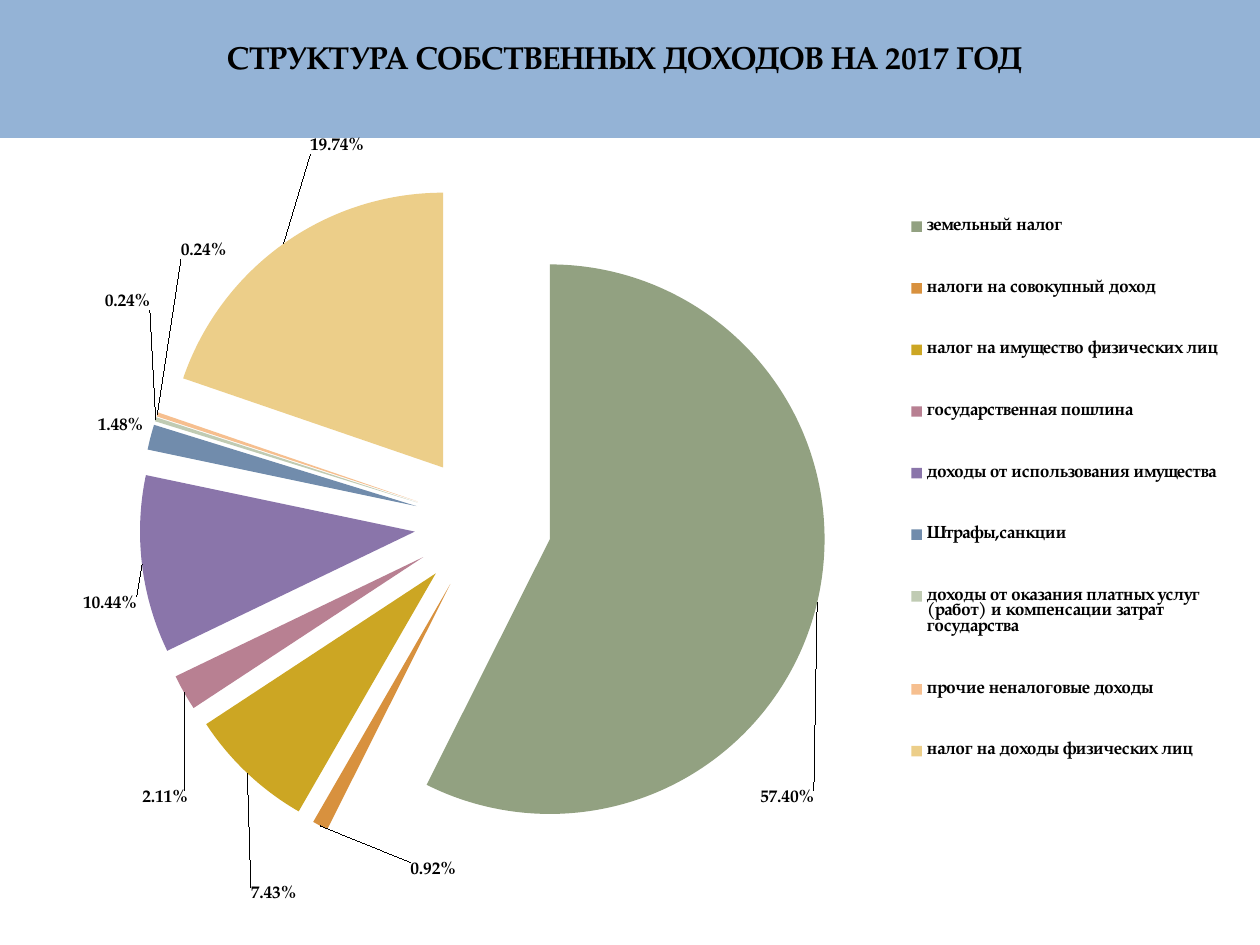
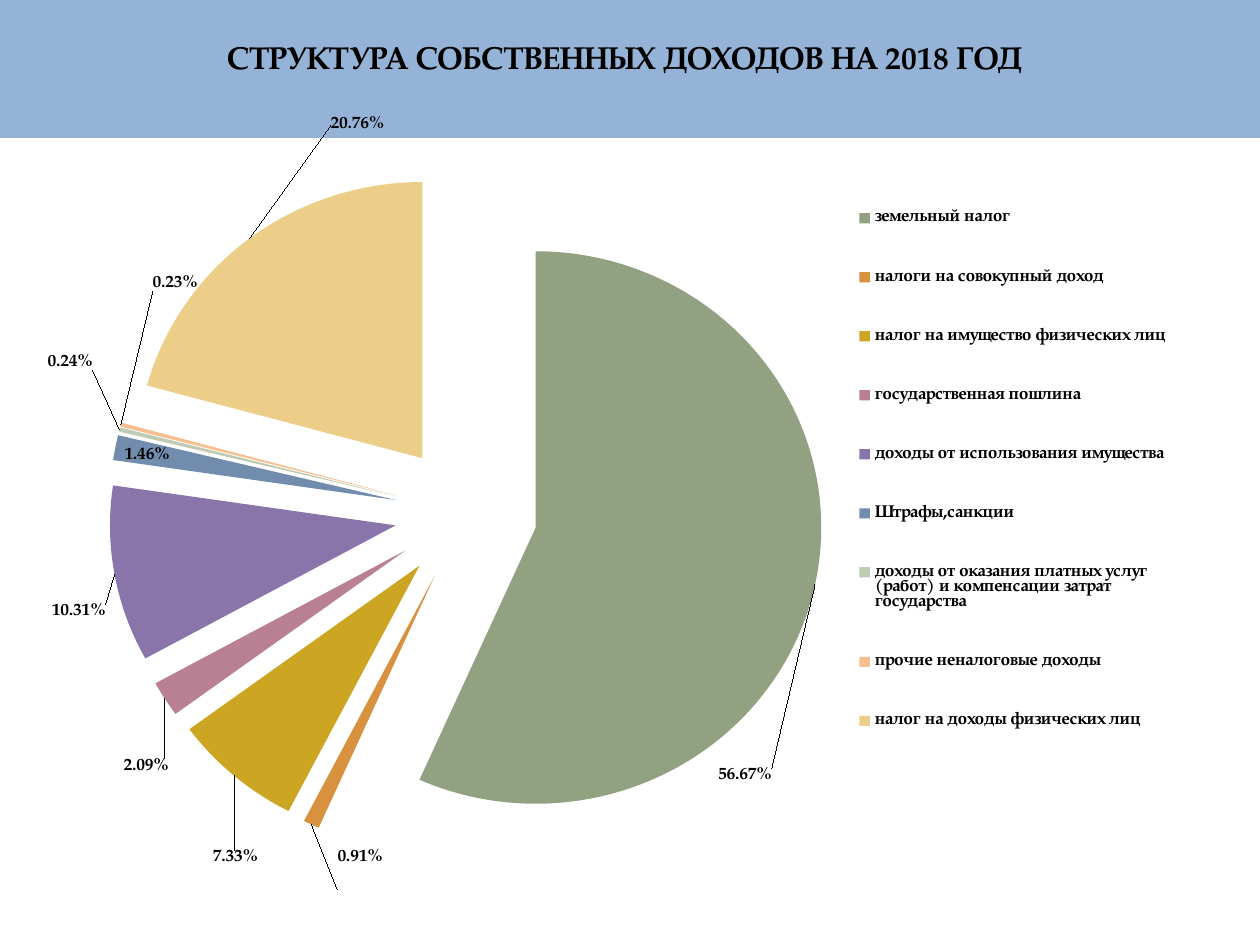
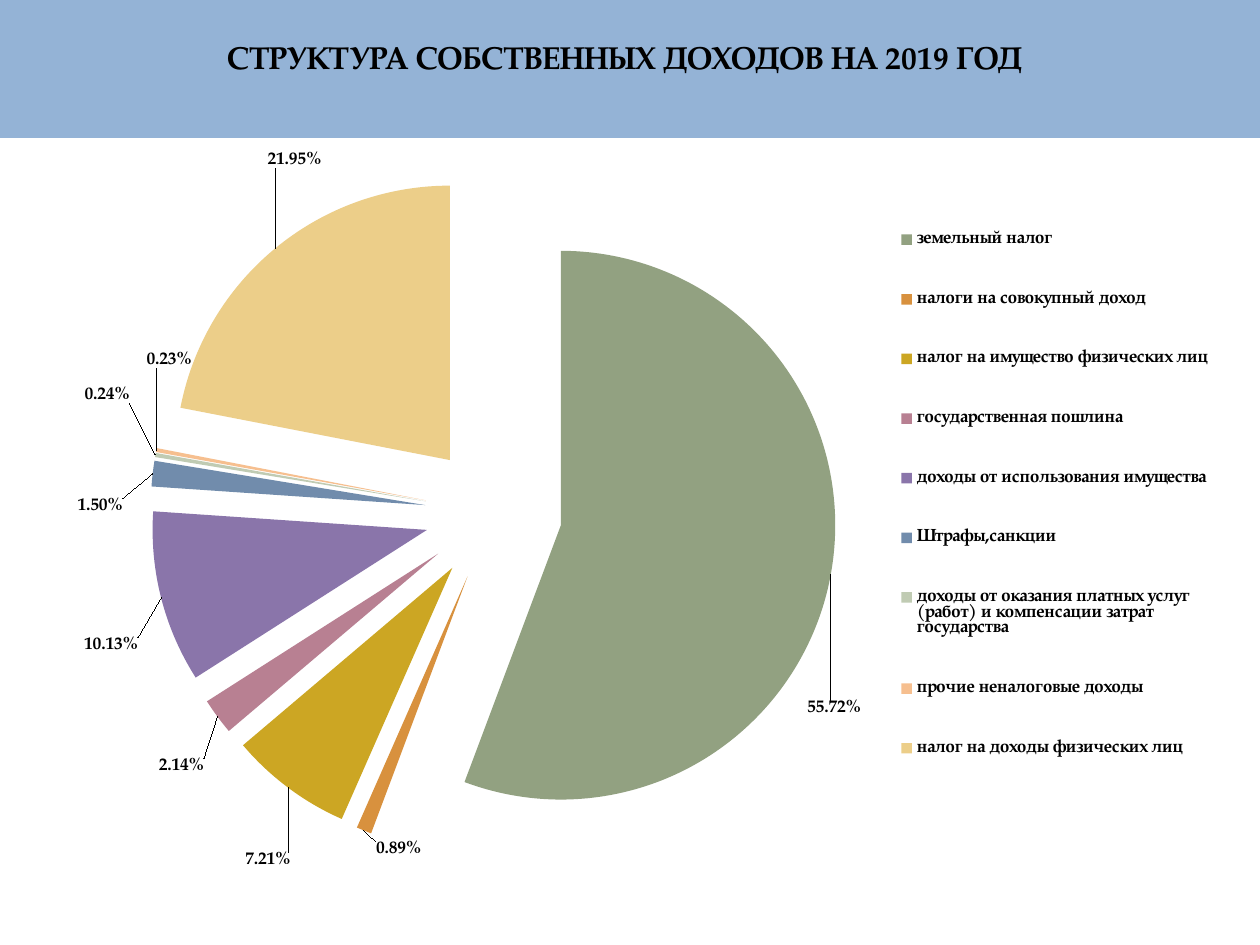
import math
import lxml.etree
import pptx
import pptx.chart.data
import pptx.dml.color
import pptx.enum.chart
import pptx.enum.shapes
import pptx.enum.text
import pptx.oxml.ns
import pptx.util

PIXELS_PER_INCH = 126
FONT = "TeX Gyre Pagella"
LABEL_FORMAT = '0.00"%"'
COLORS = {"band": "94B3D6", "text": "000000"}
INCOME_COLORS = {
    "земельный налог": "92A181",
    "налоги на совокупный доход": "D8913E",
    "налог на имущество физических лиц": "CCA623",
    "государственная пошлина": "B88092",
    "доходы от использования имущества": "8A75AA",
    "Штрафы,санкции": "718CAC",
    "доходы от оказания платных услуг (работ) и компенсации затрат государства": "C0CBB3",
    "прочие неналоговые доходы": "F6BF8F",
    "налог на доходы физических лиц": "ECCE89",
}
YEARS = [
    {
        "year": 2017,
        "chart": (32, 120, 1197, 784),
        "plot": (105, 180, 756, 687),
        "legend": (905, 173, 320, 632),
        "shares": (57.4, 0.92, 7.43, 2.11, 10.44, 1.48, 0.24, 0.24, 19.74),
        "labels": ((780, 799), (436, 866), (278, 892), (171, 797), (117, 606),
                   (127, 426), (134, 303), (210, 252), (341, 151)),
    },
    {
        "year": 2018,
        "chart": (21, 116, 1155, 774),
        "plot": (82, 169, 768, 714),
        "legend": (853, 168, 320, 626),
        "shares": (56.67, 0.91, 7.33, 2.09, 10.31, 1.46, 0.24, 0.23, 20.76),
        "labels": ((738, 798), (363, 919), (240, 879), (152, 786), (86, 629),
                   (154, 466), (77, 370), (182, 289), (362, 121)),
    },
    {
        "year": 2019,
        "chart": (63, 136, 1155, 756),
        "plot": (115, 170, 757, 686),
        "legend": (895, 188, 320, 612),
        "shares": (55.72, 0.89, 7.21, 2.14, 10.13, 1.5, 0.24, 0.23, 21.95),
        "labels": ((827, 710), (401, 845), (272, 857), (187, 764), (118, 646),
                   (107, 505), (114, 395), (176, 360), (299, 164)),
    },
]


def px(length):
    return pptx.util.Emu(round(length * 914400 / PIXELS_PER_INCH))


def rgb(value):
    return pptx.dml.color.RGBColor.from_string(value)


def chart_element(name, value=None):
    element = lxml.etree.Element(pptx.oxml.ns.qn("c:" + name))
    if value is not None:
        element.set("val", str(value))
    return element


def manual_layout(**settings):
    layout = chart_element("layout")
    manual = chart_element("manualLayout")
    layout.append(manual)
    for name, value in settings.items():
        manual.append(chart_element(name, value))
    return layout


def box_layout(box, frame, **target):
    left, top, width, height = box
    return manual_layout(
        **target, xMode="edge", yMode="edge",
        x=round((left - frame[0]) / frame[2], 4),
        y=round((top - frame[1]) / frame[3], 4),
        w=round(width / frame[2], 4),
        h=round(height / frame[3], 4))


def default_label_centers(plot, shares):
    left, top, width, height = plot
    radius = min(width, height) / 2
    passed = 0
    for share in shares:
        angle = 2 * math.pi * (passed + share / 2) / sum(shares)
        passed += share
        across, down = math.sin(angle), -math.cos(angle)
        label_width = 54 if share >= 10 else 46
        yield (left + width / 2 + radius * across + math.copysign(label_width / 2, across),
               top + height / 2 + radius * down + math.copysign(10, down))


class IncomeDeck:
    def __init__(self):
        self.deck = pptx.Presentation()
        self.deck.slide_width = px(1260)
        self.deck.slide_height = px(945)
        self.slide = None

    def style(self, font, size, bold):
        font.name = FONT
        font.size = pptx.util.Pt(size)
        font.bold = bold
        font.color.rgb = rgb(COLORS["text"])

    def add_slide(self):
        self.slide = self.deck.slides.add_slide(self.deck.slide_layouts[5])

    def add_band(self):
        band = self.slide.shapes.add_shape(
            pptx.enum.shapes.MSO_SHAPE.RECTANGLE, *map(px, (0, 0, 1260, 138)))
        band.shadow.inherit = False
        band.fill.solid()
        band.fill.fore_color.rgb = rgb(COLORS["band"])
        band.line.fill.background()
        self.slide.shapes.title.element.addprevious(band.element)

    def add_title(self, text):
        title = self.slide.shapes.title
        title.left, title.top, title.width, title.height = map(px, (21, 32, 1207, 50))
        frame = title.text_frame
        frame.text = text
        frame.word_wrap = True
        frame.vertical_anchor = pptx.enum.text.MSO_ANCHOR.MIDDLE
        para = frame.paragraphs[0]
        para.alignment = pptx.enum.text.PP_ALIGN.CENTER
        self.style(para.font, 18, True)

    def add_pie(self, frame, plot_box, legend_box, shares, label_centers):
        data = pptx.chart.data.CategoryChartData(number_format="0.00")
        data.categories = list(INCOME_COLORS)
        data.add_series("Series 1", shares)
        chart = self.slide.shapes.add_chart(
            pptx.enum.chart.XL_CHART_TYPE.PIE, *map(px, frame), data).chart
        chart.has_title = False
        self.style(chart.font, 10, False)
        chart.plots[0].vary_by_categories = True
        plot_area = next(chart.element.iter(pptx.oxml.ns.qn("c:plotArea")))
        plot_area.insert(0, box_layout(plot_box, frame, layoutTarget="inner"))
        self.format_legend(chart, legend_box, frame)
        self.format_slices(chart)
        self.format_labels(chart, frame, plot_box, shares, label_centers)

    def format_legend(self, chart, legend_box, frame):
        chart.has_legend = True
        legend = chart.legend
        legend.position = pptx.enum.chart.XL_LEGEND_POSITION.RIGHT
        legend.include_in_layout = False
        self.style(legend.font, 10, True)
        element = next(chart.element.iter(pptx.oxml.ns.qn("c:legend")))
        for old_layout in element.findall(pptx.oxml.ns.qn("c:layout")):
            element.remove(old_layout)
        element.find(pptx.oxml.ns.qn("c:legendPos")).addnext(box_layout(legend_box, frame))

    def format_slices(self, chart):
        series = chart.plots[0].series[0]
        for index, color in enumerate(INCOME_COLORS.values()):
            slice_format = series.points[index].format
            slice_format.fill.solid()
            slice_format.fill.fore_color.rgb = rgb(color)
            slice_format.line.fill.background()
        first_slice = next(chart.element.iter(pptx.oxml.ns.qn("c:dPt")))
        first_slice.addprevious(chart_element("explosion", 25))

    def format_labels(self, chart, frame, plot_box, shares, label_centers):
        outside = pptx.enum.chart.XL_LABEL_POSITION.OUTSIDE_END
        series = chart.plots[0].series[0]
        labels = series.data_labels
        labels.show_value = True
        labels.number_format = LABEL_FORMAT
        labels.number_format_is_linked = False
        labels.position = outside
        self.style(labels.font, 10, True)
        for index in range(len(shares)):
            label = series.points[index].data_label
            label.position = outside
            self.style(label.font, 10, True)
        elements = chart.element.iter(pptx.oxml.ns.qn("c:dLbl"))
        defaults = default_label_centers(plot_box, shares)
        for element, center, default in zip(list(elements), label_centers, defaults):
            offset = manual_layout(x=round((center[0] - default[0]) / frame[2], 4),
                                   y=round((center[1] - default[1]) / frame[3], 4))
            number_format = chart_element("numFmt")
            number_format.set("formatCode", LABEL_FORMAT)
            number_format.set("sourceLinked", "0")
            element.find(pptx.oxml.ns.qn("c:idx")).addnext(offset)
            offset.addnext(number_format)


def main():
    income = IncomeDeck()
    for entry in YEARS:
        income.add_slide()
        income.add_band()
        income.add_title(f"СТРУКТУРА СОБСТВЕННЫХ ДОХОДОВ НА {entry['year']} ГОД")
        income.add_pie(entry["chart"], entry["plot"], entry["legend"],
                       entry["shares"], entry["labels"])
    income.deck.save("out.pptx")


if __name__ == "__main__":
    main()
